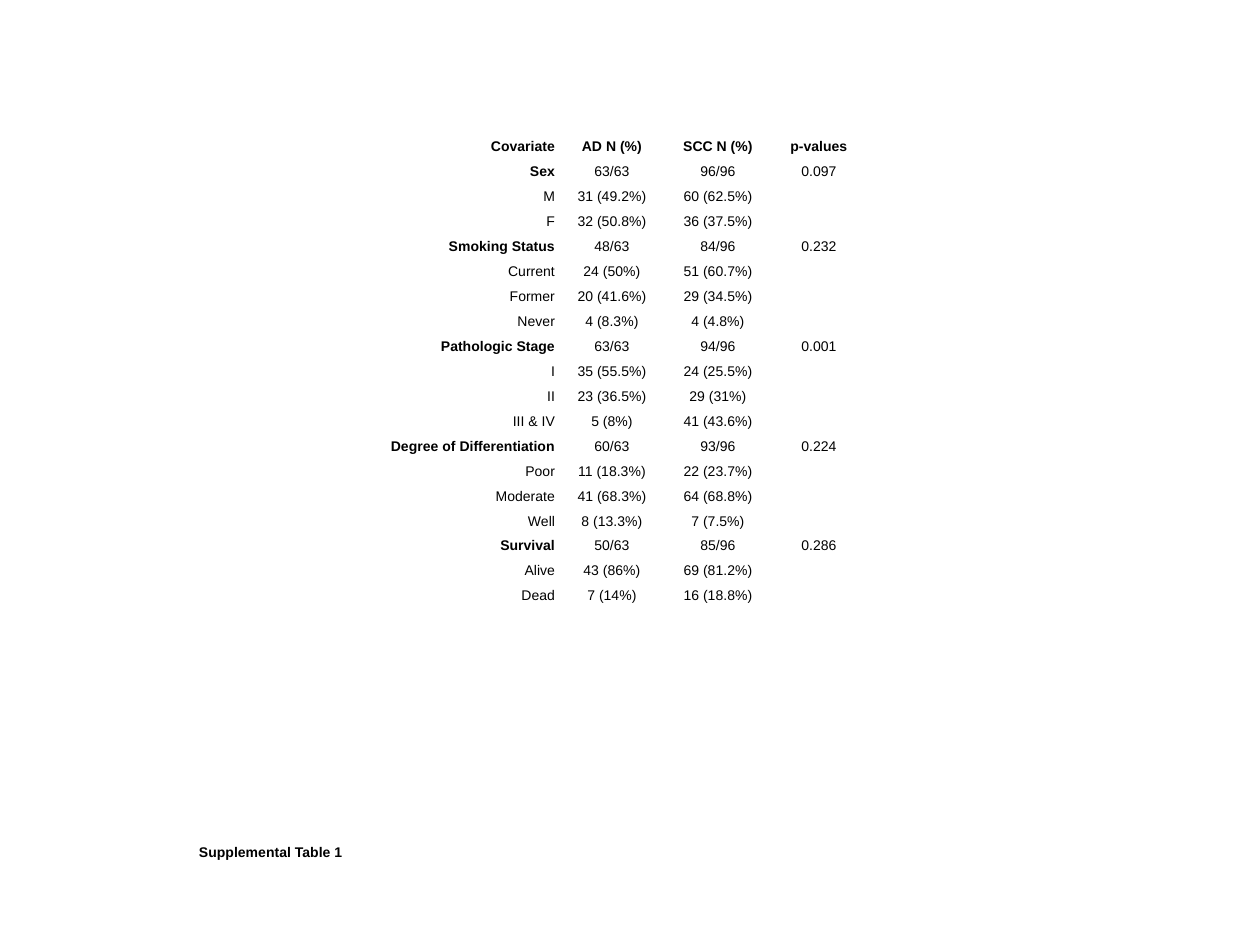
from lxml.etree import SubElement
from pptx import Presentation
from pptx.dml.color import RGBColor
from pptx.enum.text import MSO_ANCHOR as Anchor, MSO_AUTO_SIZE as AutoSize, PP_ALIGN as Align
from pptx.oxml.ns import qn
from pptx.util import Emu, Pt

PX_PER_INCH = 126
BLANK_LAYOUT = 6

HEADER = ("Covariate", "AD N (%)", "SCC N (%)", "p-values")
# Each group: name, AD total, SCC total, p-value, then its levels.
GROUPS = [
    (("Sex", "63/63", "96/96", "0.097"), [
        ("M", "31 (49.2%)", "60 (62.5%)"),
        ("F", "32 (50.8%)", "36 (37.5%)")]),
    (("Smoking Status", "48/63", "84/96", "0.232"), [
        ("Current", "24 (50%)", "51 (60.7%)"),
        ("Former", "20 (41.6%)", "29 (34.5%)"),
        ("Never", "4 (8.3%)", "4 (4.8%)")]),
    (("Pathologic Stage", "63/63", "94/96", "0.001"), [
        ("I", "35 (55.5%)", "24 (25.5%)"),
        ("II", "23 (36.5%)", "29 (31%)"),
        ("III & IV", "5 (8%)", "41 (43.6%)")]),
    (("Degree of Differentiation", "60/63", "93/96", "0.224"), [
        ("Poor", "11 (18.3%)", "22 (23.7%)"),
        ("Moderate", "41 (68.3%)", "64 (68.8%)"),
        ("Well", "8 (13.3%)", "7 (7.5%)")]),
    (("Survival", "50/63", "85/96", "0.286"), [
        ("Alive", "43 (86%)", "69 (81.2%)"),
        ("Dead", "7 (14%)", "16 (18.8%)")]),
]


def px(length):
    return Emu(round(length * 914400 / PX_PER_INCH))


def color(hex_text):
    return RGBColor.from_string(hex_text)


def set_insets(target, across, down):
    target.margin_left = target.margin_right = px(across)
    target.margin_top = target.margin_bottom = px(down)


class SlideBuilder:
    font_name = "Arial"
    font_size = 8
    ink = "000000"

    def __init__(self, slide):
        self.slide = slide

    def add_text(self, para, text, bold=False, align=Align.LEFT):
        """Add one styled span; an empty text still fixes the line height."""
        para.alignment = align
        if not text:
            end = SubElement(para._p, qn("a:endParaRPr"))
            end.set("sz", str(self.font_size * 100))
            return
        span = para.add_run()
        span.text = text
        span.font.name = self.font_name
        span.font.size = Pt(self.font_size)
        span.font.bold = bold
        span.font.color.rgb = color(self.ink)

    def caption(self, text, left, top, width, height):
        box = self.slide.shapes.add_textbox(px(left), px(top), px(width), px(height))
        frame = box.text_frame
        frame.word_wrap = True
        frame.auto_size = AutoSize.SHAPE_TO_FIT_TEXT
        set_insets(frame, 10, 5)
        self.add_text(frame.paragraphs[0], text, bold=True)

    def covariate_table(self, left, top, widths, row_height):
        rows = [(HEADER, True)]
        for summary, levels in GROUPS:
            rows.append((summary, True))
            rows.extend(((*level, ""), False) for level in levels)

        table = self.slide.shapes.add_table(
            len(rows), len(widths), px(left), px(top),
            px(sum(widths)), px(row_height * len(rows))).table
        table.first_row = table.horz_banding = False
        for column, width in zip(table.columns, widths):
            column.width = px(width)

        for row_index, (values, is_heading) in enumerate(rows):
            table.rows[row_index].height = px(row_height)
            for column_index, value in enumerate(values):
                cell = table.cell(row_index, column_index)
                cell.fill.background()
                cell.vertical_anchor = Anchor.TOP
                set_insets(cell, 9, 4)
                self.add_text(
                    cell.text_frame.paragraphs[0], value,
                    bold=row_index == 0 or (is_heading and column_index == 0),
                    align=Align.CENTER if column_index else Align.RIGHT)


def main():
    deck = Presentation()
    deck.slide_width, deck.slide_height = px(1260), px(945)
    page = SlideBuilder(deck.slides.add_slide(deck.slide_layouts[BLANK_LAYOUT]))
    page.caption("Supplemental Table 1", 189, 839, 895, 26)
    page.covariate_table(381, 135, widths=(183, 96, 116, 86), row_height=25)
    deck.save("out.pptx")


if __name__ == "__main__":
    main()
